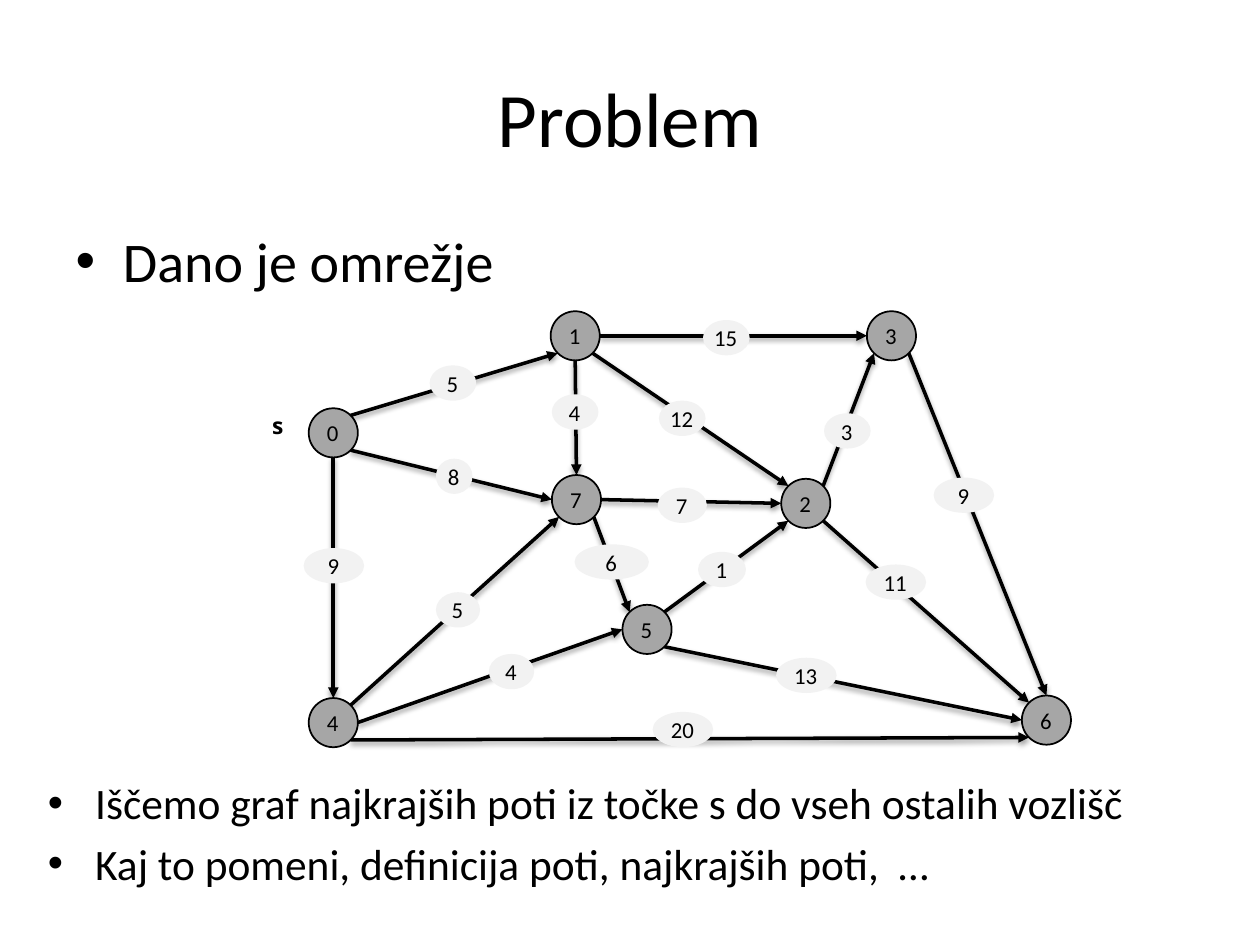
from dataclasses import dataclass
from math import sqrt

from lxml.etree import SubElement
from pptx import Presentation
from pptx.dml.color import RGBColor as RGB
from pptx.enum.shapes import MSO_CONNECTOR as CONN, MSO_SHAPE as SHAPE
from pptx.enum.text import MSO_ANCHOR as ANCHOR, MSO_AUTO_SIZE as FIT, PP_ALIGN as ALIGN
from pptx.oxml.ns import qn
from pptx.util import Inches, Pt


@dataclass(frozen=True)
class Theme:
    ink: RGB = RGB(0, 0, 0)
    node: RGB = RGB(0xA6, 0xA6, 0xA6)
    weight: RGB = RGB(0xF2, 0xF2, 0xF2)
    font: str = "Calibri"
    source_font: str = "Open Sans"
    title: float = 44
    lead: float = 32
    body: float = 24.8
    graph: float = 13


THEME = Theme()
NODE_SIZE = 0.39
WEIGHT_HEIGHT = 0.28
DIAGONAL = sqrt(0.5)
DIRECTIONS = {
    "N": (0, -1), "S": (0, 1), "E": (1, 0), "W": (-1, 0),
    "NE": (DIAGONAL, -DIAGONAL), "SE": (DIAGONAL, DIAGONAL),
    "NW": (-DIAGONAL, -DIAGONAL), "SW": (-DIAGONAL, DIAGONAL),
}
NODES = {
    "0": (2.45, 3.24), "4": (2.45, 5.54), "7": (4.38, 3.77), "1": (4.37, 2.47),
    "3": (6.88, 2.47), "5": (4.94, 4.8), "2": (6.2, 3.8), "6": (8.11, 5.52),
}
EDGES = [
    ("0", "NE", "1", "SW", "5", 3.41, 2.9, 0.37),
    ("0", "SE", "7", "W", "8", 3.46, 3.64, 0.29),
    ("0", "S", "4", "N", "9", 2.41, 4.35, 0.48),
    ("1", "E", "3", "W", "15", 5.58, 2.54, 0.37),
    ("1", "SE", "2", "NW", "12", 5.23, 3.18, 0.37),
    ("1", "S", "7", "N", "4", 4.38, 3.13, 0.37),
    ("2", "NE", "3", "SW", "3", 6.54, 3.28, 0.37),
    ("2", "SE", "6", "NW", "11", 6.87, 4.48, 0.48),
    ("3", "SE", "6", "N", "9", 7.41, 3.79, 0.48),
    ("4", "NE", "7", "SW", "5", 3.46, 4.7, 0.35),
    ("4", "E", "5", "W", "4", 3.88, 5.19, 0.36),
    ("4", "SE", "6", "SW", "20", 5.18, 5.65, 0.48),
    ("5", "NE", "2", "SW", "1", 5.54, 4.38, 0.38),
    ("5", "SE", "6", "W", "13", 6.16, 5.22, 0.48),
    ("7", "E", "2", "W", "7", 5.22, 3.87, 0.39),
    ("7", "SE", "5", "NW", "6", 4.56, 4.32, 0.59),
]


def format_text(tf, size, font=THEME.font, bold=False, align=None):
    for p in tf.paragraphs:
        p.alignment = align
        for r in p.runs:
            r.font.name = font
            r.font.size = Pt(size)
            r.font.bold = bold
            r.font.color.rgb = THEME.ink


def fill_placeholder(sp, text, box, size, align=None):
    sp.left, sp.top, sp.width, sp.height = (Inches(v) for v in box)
    sp.text_frame.text = text
    format_text(sp.text_frame, size, align=align)


def set_insets(tf, right):
    tf.margin_left = tf.margin_top = tf.margin_bottom = 0
    tf.margin_right = Inches(right)


def add_ellipse(shapes, text, x, y, w, h, fill, outlined=False):
    sp = shapes.add_shape(SHAPE.OVAL, Inches(x), Inches(y), Inches(w), Inches(h))
    sp.shadow.inherit = False
    sp.fill.solid()
    sp.fill.fore_color.rgb = fill
    if outlined:
        sp.line.color.rgb = THEME.ink
        sp.line.width = Pt(1)
    else:
        sp.line.fill.background()
    tf = sp.text_frame
    tf.text = text
    tf.word_wrap = True
    tf.vertical_anchor = ANCHOR.MIDDLE
    set_insets(tf, 0.01)
    format_text(tf, THEME.graph, align=ALIGN.CENTER)


def node_point(name, side):
    radius = NODE_SIZE / 2
    return [Inches(start + radius * (1 + step))
            for start, step in zip(NODES[name], DIRECTIONS[side])]


def add_shadow(sp_pr):
    effects = SubElement(sp_pr, qn("a:effectLst"))
    shadow = SubElement(effects, qn("a:outerShdw"), blurRad=str(Pt(3.1)),
                        dist=str(Pt(1.6)), dir="5400000", rotWithShape="0")
    color = SubElement(shadow, qn("a:srgbClr"), val=str(THEME.ink))
    SubElement(color, qn("a:alpha"), val="38000")


def add_arrow(shapes, begin, end):
    line = shapes.add_connector(CONN.STRAIGHT, *begin, *end)
    line.line.color.rgb = THEME.ink
    line.line.width = Pt(2)
    sp_pr = line._element.spPr
    SubElement(sp_pr.find(qn("a:ln")), qn("a:tailEnd"), type="triangle")
    add_shadow(sp_pr)


def add_source_label(shapes):
    sp = shapes.add_textbox(Inches(2.12), Inches(3.27), Inches(0.19), Inches(0.22))
    tf = sp.text_frame
    tf.text = "s"
    tf.word_wrap = False
    tf.auto_size = FIT.SHAPE_TO_FIT_TEXT
    set_insets(tf, 0.05)
    tf.paragraphs[0]._p.get_or_add_pPr().set("marL", str(Inches(0.04)))
    format_text(tf, THEME.graph, THEME.source_font, bold=True)


def add_network(slide):
    shapes = slide.shapes.add_group_shape().shapes
    for start, start_side, end, end_side, *_ in EDGES:
        add_arrow(shapes, node_point(start, start_side), node_point(end, end_side))
    for name, (x, y) in NODES.items():
        add_ellipse(shapes, name, x, y, NODE_SIZE, NODE_SIZE, THEME.node, outlined=True)
    for *_, weight, x, y, w in EDGES:
        add_ellipse(shapes, weight, x, y, w, WEIGHT_HEIGHT, THEME.weight)
    add_source_label(shapes)


def main():
    prs = Presentation()
    prs.slide_width, prs.slide_height = Inches(10), Inches(7.5)
    slide = prs.slides.add_slide(prs.slide_layouts[3])
    title, lead, body = slide.placeholders
    fill_placeholder(title, "Problem", (0.5, 0.3, 9, 1.25), THEME.title, ALIGN.CENTER)
    fill_placeholder(lead, "Dano je omrežje", (0.5, 1.75, 9, 1.06), THEME.lead)
    fill_placeholder(
        body,
        "Iščemo graf najkrajših poti iz točke s do vseh ostalih vozlišč\n"
        "Kaj to pomeni, definicija poti, najkrajših poti,  …",
        (0.28, 6.11, 9, 1.06), THEME.body)
    add_network(slide)
    prs.save("out.pptx")


if __name__ == "__main__":
    main()
